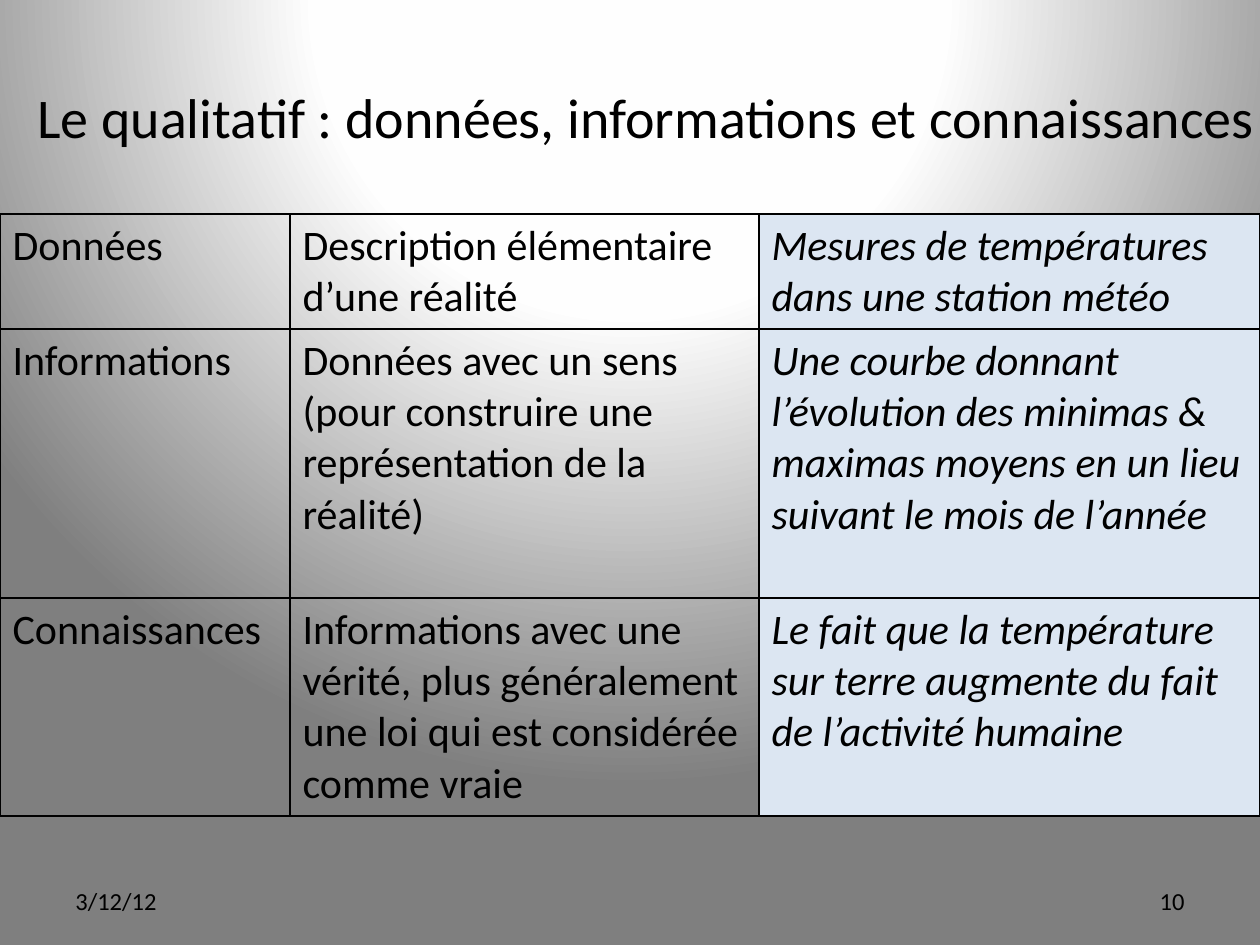
from lxml import etree
from pptx import Presentation
from pptx.dml.color import RGBColor
from pptx.enum.text import MSO_ANCHOR, PP_ALIGN
from pptx.oxml import parse_xml
from pptx.oxml.ns import nsdecls, qn
from pptx.util import Emu, Pt

LEFT, RIGHT = PP_ALIGN.LEFT, PP_ALIGN.RIGHT
MIDDLE = MSO_ANCHOR.MIDDLE
EMU_PER_PX = 914400 / 126
COLORS = {"text": "000000", "border": "000000", "example": "DCE6F2",
          "center": "FFFFFF", "halo": "FEFEFE", "edge": "7F7F7F"}

CONCEPTS = [
    ("Données",
     "Description élémentaire d’une réalité",
     "Mesures de températures dans une station météo"),
    ("Informations",
     "Données avec un sens (pour construire une représentation de la réalité)",
     "Une courbe donnant l’évolution des minimas & maximas moyens en un lieu "
     "suivant le mois de l’année"),
    ("Connaissances",
     "Informations avec une vérité, plus généralement une loi qui est "
     "considérée comme vraie",
     "Le fait que la température sur terre augmente du fait de l’activité "
     "humaine"),
]
COLUMN_WIDTHS = [290, 469, 501]
ROW_HEIGHTS = [115, 269, 218]


def px(length):
    return Emu(round(length * EMU_PER_PX))


def write(frame, text, size=24, italic=False, align=LEFT):
    paragraph = frame.paragraphs[0]
    paragraph.alignment = align
    run = paragraph.add_run()
    run.text = text
    run.font.name = "Calibri"
    run.font.size = Pt(size)
    run.font.italic = italic
    run.font.color.rgb = RGBColor.from_string(COLORS["text"])


def add_borders(cell, width=1):
    """Draw all four cell borders; call before the cell gets its fill."""
    properties = cell._tc.get_or_add_tcPr()
    for side in ("a:lnL", "a:lnR", "a:lnT", "a:lnB"):
        line = etree.SubElement(properties, qn(side), w=str(Pt(width)))
        fill = etree.SubElement(line, qn("a:solidFill"))
        etree.SubElement(fill, qn("a:srgbClr"), val=COLORS["border"])


class SlideBuilder:
    """Holds the style and the current slide."""

    def __init__(self, presentation):
        self.slide = presentation.slides.add_slide(presentation.slide_layouts[6])

    def background(self, stops):
        """Fill with a circular gradient centred above the slide."""
        self.slide.background.fill.gradient()
        gradient = self.slide.element.xpath(".//p:bg//a:gradFill")[0]
        stop_xml = "".join(
            f'<a:gs pos="{percent * 1000}"><a:srgbClr val="{COLORS[name]}"/></a:gs>'
            for percent, name in stops)
        gradient.getparent().replace(gradient, parse_xml(
            f'<a:gradFill {nsdecls("a")} rotWithShape="1"><a:gsLst>{stop_xml}</a:gsLst>'
            '<a:path path="circle"><a:fillToRect l="50000" t="-80000" '
            'r="50000" b="180000"/></a:path></a:gradFill>'))

    def text(self, left, top, width, height, content, **style):
        box = self.slide.shapes.add_textbox(*map(px, (left, top, width, height)))
        frame = box.text_frame
        frame.word_wrap = True
        frame.vertical_anchor = MIDDLE
        write(frame, content, **style)

    def table(self, left, top, widths, heights, rows):
        """Add a bordered table whose last column holds italic examples."""
        table = self.slide.shapes.add_table(
            len(heights), len(widths),
            *map(px, (left, top, sum(widths), sum(heights)))).table
        table.first_row = table.horz_banding = False
        for column, width in zip(table.columns, widths):
            column.width = px(width)
        for row, height, texts in zip(table.rows, heights, rows):
            row.height = px(height)
            for index, (cell, content) in enumerate(zip(row.cells, texts)):
                is_example = index == len(widths) - 1
                add_borders(cell)
                if is_example:
                    cell.fill.solid()
                    cell.fill.fore_color.rgb = RGBColor.from_string(COLORS["example"])
                else:
                    cell.fill.background()
                write(cell.text_frame, content, italic=is_example)


def main():
    presentation = Presentation()
    presentation.slide_width, presentation.slide_height = px(1260), px(945)
    builder = SlideBuilder(presentation)
    builder.background([(0, "center"), (40, "halo"), (100, "edge")])
    builder.table(0, 214, COLUMN_WIDTHS, ROW_HEIGHTS, CONCEPTS)
    builder.text(25, 37, 1349, 158,
                 "Le qualitatif : données, informations et connaissances", size=32)
    builder.text(63, 876, 294, 50, "3/12/12", size=14)
    builder.text(903, 876, 294, 50, "10", size=14, align=RIGHT)
    presentation.save("out.pptx")


if __name__ == "__main__":
    main()
